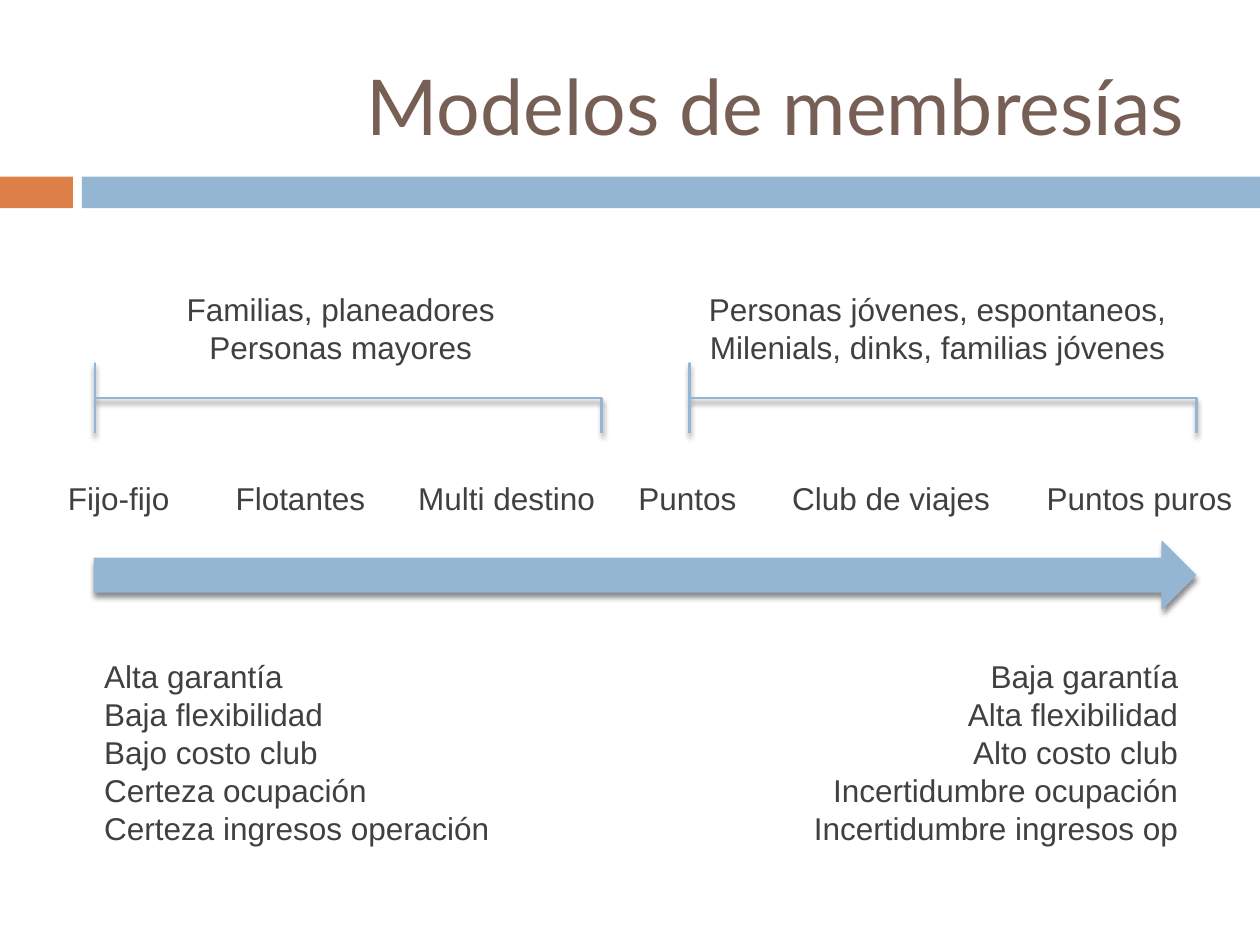
from lxml.etree import SubElement
from pptx import Presentation
from pptx.dml.color import RGBColor
from pptx.enum.shapes import MSO_SHAPE
from pptx.enum.text import MSO_ANCHOR, MSO_AUTO_SIZE, PP_ALIGN
from pptx.oxml.ns import qn
from pptx.util import Cm, Pt

COLORS = {
    "title": "775F55",
    "text": "404040",
    "blue": "94B6D2",
    "orange": "DD8047",
    "shadow": "000000",
}


def write(frame, text, size=18, font="Arial", color="text", align=PP_ALIGN.LEFT):
    """Fill a text frame with one paragraph per line of text."""
    for index, line in enumerate(text.split("\n")):
        paragraph = frame.paragraphs[0] if index == 0 else frame.add_paragraph()
        paragraph.alignment = align
        run = paragraph.add_run()
        run.text = line
        run.font.size = Pt(size)
        run.font.name = font
        run.font.color.rgb = RGBColor.from_string(COLORS[color])


def add_soft_shadow(shape):
    """Give the shape a blurred shadow straight below it."""
    shape.shadow.inherit = False
    effects = shape.element.spPr.find(qn("a:effectLst"))
    outer = SubElement(effects, qn("a:outerShdw"), blurRad="38100", dist="30000",
                       dir="5400000", rotWithShape="0")
    tint = SubElement(outer, qn("a:srgbClr"), val=COLORS["shadow"])
    SubElement(tint, qn("a:alpha"), val="45000")


prs = Presentation()
prs.slide_width, prs.slide_height = Cm(25.4), Cm(19.05)
slide = prs.slides.add_slide(prs.slide_layouts[5])
shapes = slide.shapes
blue = RGBColor.from_string(COLORS["blue"])

# Title and the band below it
title = shapes.title
title.left, title.top, title.width, title.height = Cm(1.09), Cm(0.91), Cm(23.04), Cm(2.41)
title.text_frame.vertical_anchor = MSO_ANCHOR.MIDDLE
title.text_frame.auto_size = MSO_AUTO_SIZE.NONE
write(title.text_frame, "Modelos de membresías", size=44, font="Lato",
      color="title", align=PP_ALIGN.RIGHT)

for left, width, color in [(0, 1.47, "orange"), (1.65, 23.75, "blue")]:
    band = shapes.add_shape(MSO_SHAPE.RECTANGLE, Cm(left), Cm(3.56), Cm(width), Cm(0.64))
    band.shadow.inherit = False
    band.fill.solid()
    band.fill.fore_color.rgb = RGBColor.from_string(COLORS[color])
    band.line.fill.background()

# Scale from fixed weeks to pure points
scale = shapes.add_shape(MSO_SHAPE.RIGHT_ARROW, Cm(1.9), Cm(10.92), Cm(22.2), Cm(1.35))
scale.fill.solid()
scale.fill.fore_color.rgb = blue
scale.line.color.rgb = blue
scale.line.width = Pt(0.79)
add_soft_shadow(scale)

# Braces that group the models by audience
for left in (6.32, 18.31):
    brace = shapes.add_shape(MSO_SHAPE.RIGHT_BRACE, Cm(left), Cm(2.92), Cm(1.4), Cm(10.21))
    brace.rotation = 270
    brace.adjustments[0] = 0.083
    brace.adjustments[1] = 0
    brace.fill.background()
    brace.line.color.rgb = blue
    brace.line.width = Pt(1.5)
    add_soft_shadow(brace)

# Each entry: left, width, text, alignment
models = [
    (1.12, 2.67, "Fijo-fijo", PP_ALIGN.LEFT),
    (4.5, 3.15, "Flotantes", PP_ALIGN.LEFT),
    (8.18, 4.14, "Multi destino", PP_ALIGN.LEFT),
    (12.62, 2.51, "Puntos", PP_ALIGN.LEFT),
    (15.72, 4.55, "Club de viajes", PP_ALIGN.LEFT),
    (20.85, 4.29, "Puntos puros", PP_ALIGN.LEFT),
]
traits = [
    (1.85, 8.36, "Alta garantía\nBaja flexibilidad\nBajo costo club\n"
     "Certeza ocupación\nCerteza ingresos operación", PP_ALIGN.LEFT),
    (16.08, 7.92, "Baja garantía\nAlta flexibilidad\nAlto costo club\n"
     "Incertidumbre ocupación\nIncertidumbre ingresos op", PP_ALIGN.RIGHT),
]
audiences = [
    (3.48, 6.78, "Familias, planeadores\nPersonas mayores", PP_ALIGN.CENTER),
    (14, 9.8, "Personas jóvenes, espontaneos,\nMilenials, dinks, familias jóvenes",
     PP_ALIGN.CENTER),
]
for top, height, entries in [(9.53, 1.02, models), (13.13, 4.11, traits),
                             (5.72, 1.8, audiences)]:
    for left, width, text, align in entries:
        label = shapes.add_textbox(Cm(left), Cm(top), Cm(width), Cm(height))
        label.text_frame.word_wrap = False
        label.text_frame.auto_size = MSO_AUTO_SIZE.SHAPE_TO_FIT_TEXT
        write(label.text_frame, text, align=align)

prs.save("out.pptx")
